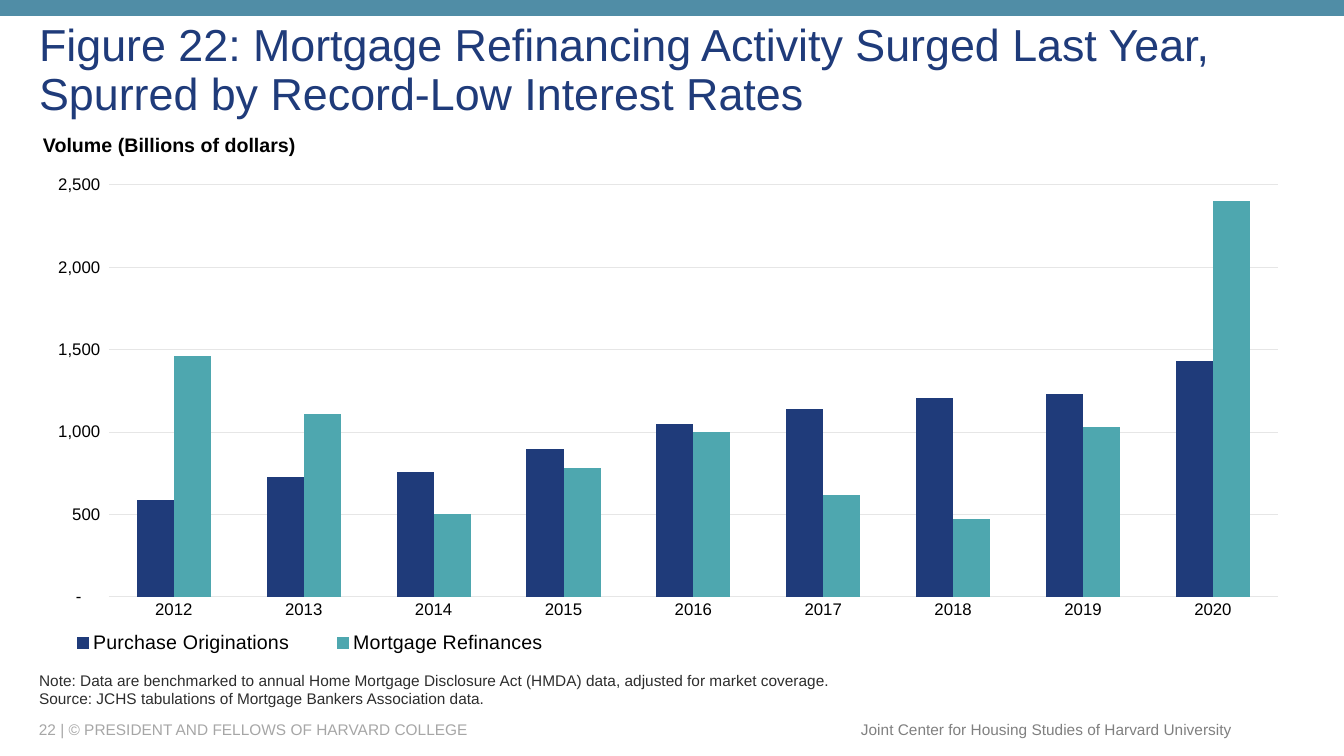
"""Build the slide on mortgage refinancing activity, 2012 to 2020."""
from lxml import etree
from pptx import Presentation
from pptx.chart.data import CategoryChartData
from pptx.dml.color import RGBColor
from pptx.enum import chart as ch, shapes, text
from pptx.oxml.ns import qn
from pptx.util import Pt

NAVY = RGBColor(0x1F, 0x3B, 0x7A)
TEAL = RGBColor(0x4E, 0xA7, 0xAF)
BAND = RGBColor(0x50, 0x8D, 0xA6)
BLACK = RGBColor(0, 0, 0)
INK = RGBColor(0x2D, 0x2D, 0x2D)
GRAY = RGBColor(0x80, 0x80, 0x80)
SILVER = RGBColor(0xA6, 0xA6, 0xA6)
GRID = RGBColor(0xE6, 0xE6, 0xE6)
FONT = "Arial"

TITLE = "Figure 22: Mortgage Refinancing Activity Surged Last Year, Spurred by Record-Low Interest Rates"
UNIT = "Volume (Billions of dollars)"
NOTES = [
    "Note: Data are benchmarked to annual Home Mortgage Disclosure Act (HMDA) data, adjusted for market coverage.",
    "Source: JCHS tabulations of Mortgage Bankers Association data.",
]
COPYRIGHT = "22 | © PRESIDENT AND FELLOWS OF HARVARD COLLEGE"
CENTER = "Joint Center for Housing Studies of Harvard University"
YEARS = [str(year) for year in range(2012, 2021)]
SERIES = [
    ("Purchase Originations", NAVY, [590, 730, 760, 900, 1050, 1140, 1210, 1230, 1430]),
    ("Mortgage Refinances", TEAL, [1460, 1110, 500, 780, 1000, 620, 470, 1030, 2400]),
]
NUMBERS = '_(* #,##0_);_(* \\(#,##0\\);_(* "-"??_);_('

SIZE = 1344, 756
BAND_BOX = 0, 0, 1344, 16
TITLE_BOX = 29, 28, 1275, 97
UNIT_BOX = 33, 128, 490, 34
CHART_BOX = 29, 165, 1275, 500
PLOT_BOX = 109, 185, 1169, 412
LEGEND_BOX = 36, 628, 548, 30
NOTES_BOX = 29, 655, 1184, 58
COPYRIGHT_BOX = 29, 719, 798, 20
CENTER_BOX = 849, 715, 393, 29


def px(*lengths):
    return [round(n * 914400 / 100.8) for n in lengths]


def write(sp, lines, size, color, bold=False, align=text.PP_ALIGN.LEFT,
          anchor=text.MSO_ANCHOR.MIDDLE, spacing=None, wrap=True):
    tf = sp.text_frame
    tf.auto_size = text.MSO_AUTO_SIZE.NONE
    tf.word_wrap = wrap
    tf.vertical_anchor = anchor
    for i, line in enumerate(lines):
        p = tf.paragraphs[0] if i == 0 else tf.add_paragraph()
        pPr = p._p.get_or_add_pPr()
        pPr.set("marL", "0")
        pPr.set("indent", "0")
        etree.SubElement(pPr, qn("a:buNone"))
        p.alignment = align
        p.line_spacing = spacing
        p.space_before = Pt(0)
        r = p.add_run()
        r.text = line
        style(r.font, size, color)
        r.font.bold = bold


def style(font, size, color):
    font.name = FONT
    font.size = Pt(size)
    font.color.rgb = color


def place(sp, box):
    sp.left, sp.top, sp.width, sp.height = px(*box)
    return sp


def add_text(s, box, line, size, color, **fmt):
    write(s.shapes.add_textbox(*px(*box)), [line], size, color, **fmt)


def set_layout(parent, box, inner=False):
    layout = parent.find(qn("c:layout"))
    if layout is None:
        layout = etree.Element(qn("c:layout"))
        before = parent.find(qn("c:legendPos"))
        if before is None:
            parent.insert(0, layout)
        else:
            before.addnext(layout)
    for child in list(layout):
        layout.remove(child)
    manual = etree.SubElement(layout, qn("c:manualLayout"))
    left, top, width, height = CHART_BOX
    x, y, w, h = box
    values = [("layoutTarget", "inner")] if inner else []
    values += [("xMode", "edge"), ("yMode", "edge"),
               ("x", round((x - left) / width, 4)), ("y", round((y - top) / height, 4)),
               ("w", round(w / width, 4)), ("h", round(h / height, 4))]
    for tag, value in values:
        etree.SubElement(manual, qn("c:" + tag)).set("val", str(value))


def add_bars(s):
    data = CategoryChartData()
    data.categories = YEARS
    for name, _, values in SERIES:
        data.add_series(name, values)
    chart = s.shapes.add_chart(ch.XL_CHART_TYPE.COLUMN_CLUSTERED, *px(*CHART_BOX), data).chart
    chart.has_title = False
    style(chart.font, 12, BLACK)
    plot = chart.plots[0]
    plot.gap_width = 150
    plot.overlap = 0
    plot.vary_by_categories = False
    for i, (bars, (_, color, _)) in enumerate(zip(list(plot.series), SERIES)):
        bars.format.fill.solid()
        bars.format.fill.fore_color.rgb = color
        bars._element.find(qn("c:order")).set("val", str(len(SERIES) - 1 - i))

    years, volume = chart.category_axis, chart.value_axis
    for axis in (years, volume):
        axis.major_tick_mark = axis.minor_tick_mark = ch.XL_TICK_MARK.NONE
        style(axis.tick_labels.font, 12, BLACK)
    volume.minimum_scale, volume.maximum_scale, volume.major_unit = 0, 2500, 500
    volume.tick_labels.number_format = NUMBERS
    volume.tick_labels.number_format_is_linked = False
    volume.format.line.fill.background()
    volume.has_major_gridlines = True
    for line in (years.format.line, volume.major_gridlines.format.line):
        line.color.rgb = GRID
        line.width = Pt(0.75)

    chart.has_legend = True
    legend = chart.legend
    legend.position = ch.XL_LEGEND_POSITION.BOTTOM
    legend.include_in_layout = False
    style(legend.font, 14, BLACK)
    set_layout(legend._element, LEGEND_BOX)
    set_layout(chart._chartSpace.find(".//" + qn("c:plotArea")), PLOT_BOX, inner=True)


def main():
    prs = Presentation()
    prs.slide_width, prs.slide_height = px(*SIZE)
    s = prs.slides.add_slide(prs.slide_layouts[1])
    title, notes = s.placeholders

    band = s.shapes.add_shape(shapes.MSO_SHAPE.RECTANGLE, *px(*BAND_BOX))
    band.shadow.inherit = False
    band.fill.solid()
    band.fill.fore_color.rgb = BAND
    band.line.fill.background()

    bottom = text.MSO_ANCHOR.BOTTOM
    write(place(title, TITLE_BOX), [TITLE], 32, NAVY, anchor=bottom, spacing=0.9)
    add_text(s, UNIT_BOX, UNIT, 14, BLACK, bold=True)
    add_bars(s)
    write(place(notes, NOTES_BOX), NOTES, 11, INK, anchor=bottom)
    add_text(s, COPYRIGHT_BOX, COPYRIGHT, 11, SILVER)
    add_text(s, CENTER_BOX, CENTER, 11, GRAY, align=text.PP_ALIGN.RIGHT, wrap=False)
    prs.save("out.pptx")


if __name__ == "__main__":
    main()
